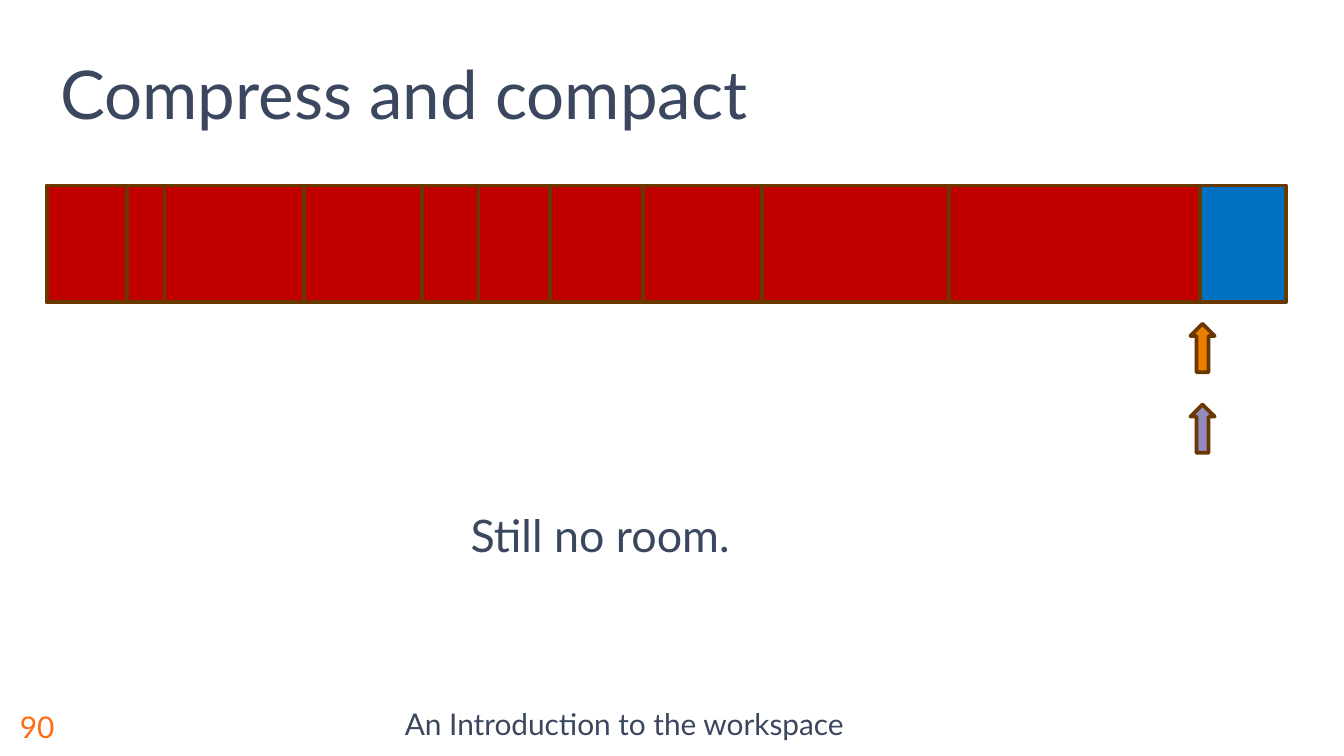
from pptx import Presentation
from pptx.dml.color import RGBColor
from pptx.enum.shapes import MSO_SHAPE
from pptx.enum.text import MSO_ANCHOR, PP_ALIGN
from pptx.util import Pt

RECT, ARROW = MSO_SHAPE.RECTANGLE, MSO_SHAPE.UP_ARROW
TOP, MIDDLE, BOTTOM = MSO_ANCHOR.TOP, MSO_ANCHOR.MIDDLE, MSO_ANCHOR.BOTTOM
LEFT, CENTER = PP_ALIGN.LEFT, PP_ALIGN.CENTER

FONT = "Lato"
INK, ORANGE, BROWN = "3B475E", "FF6A13", "683800"
FREE, USED = "0070C0", "C00000"
HEAP_X, HEAP_Y, HEAP_W, HEAP_H = 25.2, 99.4, 663.8, 62.6
BLOCK_WIDTHS = [43, 20, 74.5, 63.5, 30.2, 38.2, 49.7, 64, 100.1, 134.6]
ARROW_W, ARROW_H = 13, 25.9
POINTERS = [(173.5, "ED7F00"), (216.7, "928ABD")]


def rgb(value):
    return RGBColor.from_string(value)


def write(sp, text, size, color=INK, align=LEFT, anchor=TOP):
    tf = sp.text_frame
    tf.word_wrap = True
    tf.vertical_anchor = anchor
    p = tf.paragraphs[0]
    p.alignment = align
    r = p.add_run()
    r.text = text
    r.font.name = FONT
    r.font.size = Pt(size)
    r.font.color.rgb = rgb(color)
    return p


def add_title(s, text):
    sp = s.shapes.title
    sp.left, sp.top, sp.width, sp.height = Pt(25.2), Pt(20.9), Pt(590.4), Pt(54)
    write(sp, text, 36, anchor=BOTTOM)


def add_text(s, x, y, w, h, text, size, **style):
    sp = s.shapes.add_textbox(Pt(x), Pt(y), Pt(w), Pt(h))
    return write(sp, text, size, **style)


def add_shape(s, kind, x, y, w, h, fill):
    sp = s.shapes.add_shape(kind, Pt(x), Pt(y), Pt(w), Pt(h))
    sp.shadow.inherit = False
    sp.fill.solid()
    sp.fill.fore_color.rgb = rgb(fill)
    sp.line.color.rgb = rgb(BROWN)
    sp.line.width = Pt(2)


def add_heap(s):
    add_shape(s, RECT, HEAP_X, HEAP_Y, HEAP_W, HEAP_H, FREE)
    x = HEAP_X
    for w in BLOCK_WIDTHS:
        add_shape(s, RECT, x, HEAP_Y, w, HEAP_H, USED)
        x += w
    return x


def main():
    prs = Presentation()
    prs.slide_width, prs.slide_height = Pt(720), Pt(405)
    s = prs.slides.add_slide(prs.slide_layouts[5])
    add_title(s, "Compress and compact")
    used_end = add_heap(s)
    for y, fill in POINTERS:
        add_shape(s, ARROW, used_end + 1.2 - ARROW_W / 2, y, ARROW_W, ARROW_H, fill)
    p = add_text(s, 17.3, 268.6, 608.4, 44.6, "Still no room.", 24, align=CENTER)
    p.space_after = Pt(12)
    p = add_text(s, 56.2, 373.7, 556.6, 31.3, "An Introduction to the workspace", 16,
                 align=CENTER, anchor=MIDDLE)
    p.line_spacing = 0.8
    add_text(s, 3.6, 373.7, 52.6, 31.3, "90", 16, color=ORANGE, anchor=MIDDLE)
    prs.save("out.pptx")


if __name__ == "__main__":
    main()
